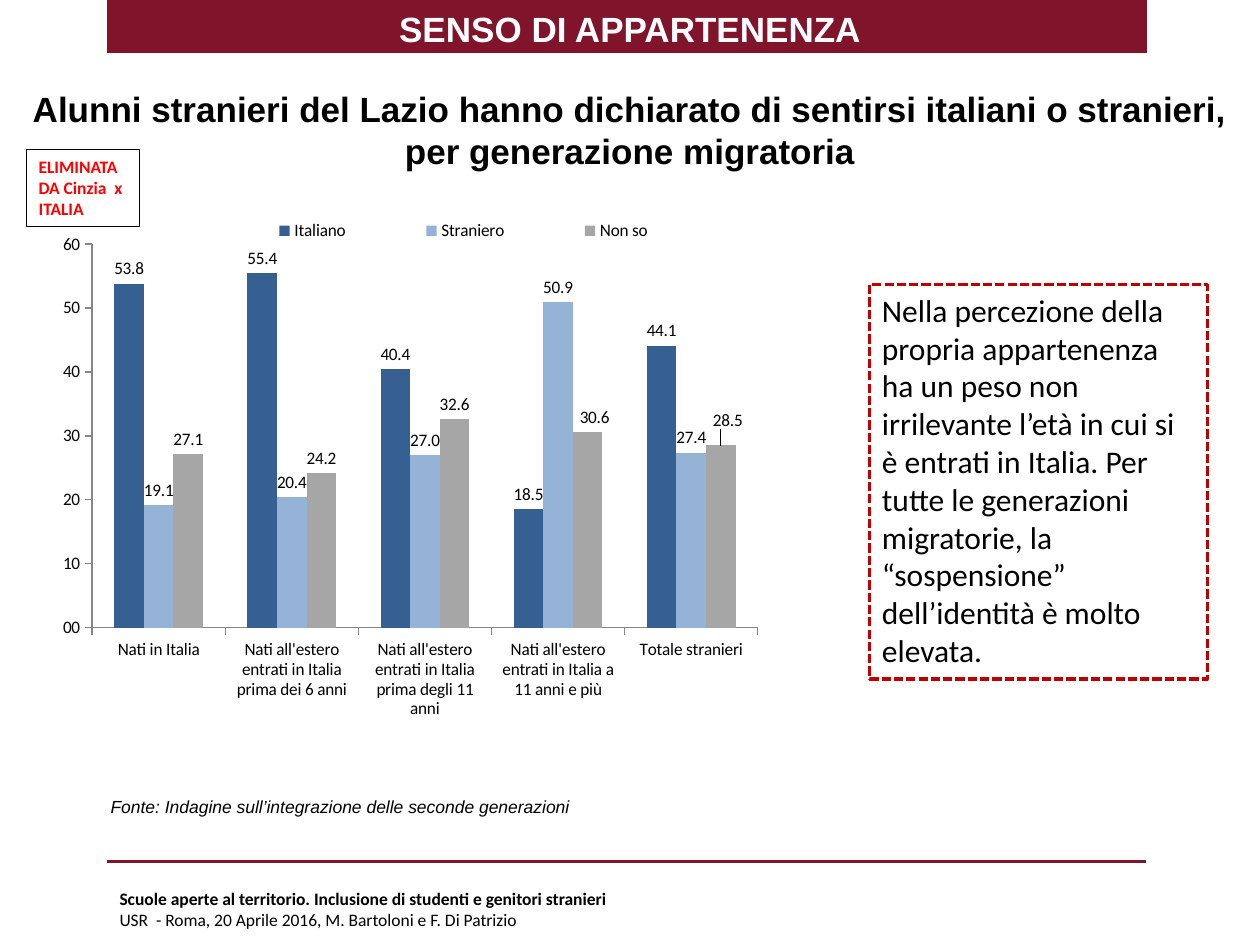
from lxml import etree
from pptx import Presentation
from pptx.chart.data import CategoryChartData
from pptx.dml.color import RGBColor
from pptx.enum.chart import XL_CHART_TYPE, XL_LABEL_POSITION, XL_LEGEND_POSITION, XL_TICK_MARK
from pptx.enum.dml import MSO_LINE
from pptx.enum.shapes import MSO_CONNECTOR, MSO_SHAPE
from pptx.enum.text import MSO_ANCHOR, PP_ALIGN
from pptx.oxml import parse_xml
from pptx.oxml.ns import nsdecls, qn
from pptx.util import Cm, Pt

COLORS = {"wine": "7F142A", "black": "000000", "white": "FFFFFF", "red": "FF0000",
          "dash": "C00000", "axis": "868686",
          "italian": "376092", "foreign": "95B3D7", "unsure": "A6A6A6"}


def rgb(name):
    return RGBColor.from_string(COLORS[name])


def chart_layout(x, y, w=None, h=None, inner=False):
    """Manual chart layout; without a size it is an offset."""
    rows = [("layoutTarget", "inner")] if inner else []
    if w:
        rows += [("xMode", "edge"), ("yMode", "edge")]
    rows += [("x", x), ("y", y)]
    if w:
        rows += [("w", w), ("h", h)]
    body = "".join(f'<c:{tag} val="{val}"/>' for tag, val in rows)
    return parse_xml(f'<c:layout {nsdecls("c")}><c:manualLayout>{body}</c:manualLayout></c:layout>')


class Deck:
    def __init__(self):
        self.prs = Presentation()
        self.prs.slide_width, self.prs.slide_height = Cm(25.4), Cm(19.05)
        self.s = self.prs.slides.add_slide(self.prs.slide_layouts[5])

    def put_text(self, sp, text, size, font="Calibri", color="black", bold=False,
                 italic=False, align=PP_ALIGN.LEFT, anchor=MSO_ANCHOR.TOP):
        tf = sp.text_frame
        tf.word_wrap = True
        tf.vertical_anchor = anchor
        p = tf.paragraphs[0]
        p.text = text
        p.alignment = align
        for r in p.runs:
            r.font.name, r.font.size = font, Pt(size)
            r.font.bold, r.font.italic = bold, italic
            r.font.color.rgb = rgb(color)
        return p

    def title(self, box, text, **style):
        sp = self.s.shapes.title
        sp.left, sp.top, sp.width, sp.height = map(Cm, box)
        self.put_text(sp, text, align=PP_ALIGN.CENTER, anchor=MSO_ANCHOR.MIDDLE, **style)

    def text(self, box, text, **style):
        return self.put_text(self.s.shapes.add_textbox(*map(Cm, box)), text, **style)

    def rect(self, box, fill=None, line=None, width=0.75, dash=None):
        sp = self.s.shapes.add_shape(MSO_SHAPE.RECTANGLE, *map(Cm, box))
        sp.shadow.inherit = False
        if fill:
            sp.fill.solid()
            sp.fill.fore_color.rgb = rgb(fill)
        else:
            sp.fill.background()
        if line:
            sp.line.color.rgb = rgb(line)
            sp.line.width = Pt(width)
            if dash:
                sp.line.dash_style = dash
        else:
            sp.line.fill.background()
        return sp

    def rule(self, x1, x2, y, color, width):
        line = self.s.shapes.add_connector(MSO_CONNECTOR.STRAIGHT, Cm(x1), Cm(y), Cm(x2), Cm(y))
        line.line.color.rgb = rgb(color)
        line.line.width = Pt(width)
        etree.SubElement(line._element.spPr, qn("a:effectLst"))

    def columns(self, box, cats, series, label_shifts):
        data = CategoryChartData()
        data.categories = cats
        for name, _, values in series:
            data.add_series(name, values)
        chart = self.s.shapes.add_chart(XL_CHART_TYPE.COLUMN_CLUSTERED, *map(Cm, box), data).chart
        chart.has_title = False
        chart.font.name, chart.font.size = "Calibri", Pt(10)
        chart.font.color.rgb = rgb("black")

        # Legend and plot area
        chart.has_legend = True
        chart.legend.position = XL_LEGEND_POSITION.BOTTOM
        chart.legend.include_in_layout = False
        for old in chart.legend._element.findall(qn("c:layout")):
            chart.legend._element.remove(old)
        chart.legend._element.find(qn("c:legendPos")).addnext(chart_layout(0.18, 0.02, 0.74, 0.05))
        area = chart._chartSpace.chart.plotArea
        for old in area.findall(qn("c:layout")):
            area.remove(old)
        area.insert(0, chart_layout(0.02, 0.07, 0.95, 0.72, inner=True))

        # Axes
        for axis in (chart.category_axis, chart.value_axis):
            axis.has_major_gridlines = False
            axis.major_tick_mark = XL_TICK_MARK.OUTSIDE
            axis.format.line.color.rgb = rgb("axis")
        axis = chart.value_axis
        axis.minimum_scale, axis.maximum_scale, axis.major_unit = 0, 60, 10
        axis.tick_labels.number_format = "#,#00"
        axis.tick_labels.number_format_is_linked = False

        # Series and value labels
        plot = chart.plots[0]
        plot.gap_width, plot.overlap, plot.vary_by_categories = 150, 0, False
        for ser, (_, color, _) in zip(plot.series, series):
            ser.format.fill.solid()
            ser.format.fill.fore_color.rgb = rgb(color)
            labels = ser.data_labels
            labels.show_value = True
            labels.number_format, labels.number_format_is_linked = "#,##0.0", False
            labels.position = XL_LABEL_POSITION.OUTSIDE_END

        # Nudged labels of the last series
        for i, (dx, dy) in label_shifts.items():
            ser.points[i].data_label.position = XL_LABEL_POSITION.OUTSIDE_END
            idx = ser.data_labels._element.xpath(f'c:dLbl/c:idx[@val="{i}"]')[0]
            idx.addnext(parse_xml(
                f'<c:numFmt {nsdecls("c")} formatCode="#,##0.0" sourceLinked="0"/>'))
            idx.addnext(chart_layout(dx, dy))


def main():
    d = Deck()

    # Header band, footer rule and titles
    d.rect((2.16, 0, 20.96, 1.07), fill="wine")
    d.rule(2.16, 23.11, 17.37, "wine", 2)
    d.title((0, 1.02, 25.4, 3.18),
            "Alunni stranieri del Lazio hanno dichiarato di sentirsi italiani o stranieri, "
            "per generazione migratoria", size=20, font="Arial", bold=True)
    d.text((0, -0.03, 25.4, 1.19), "SENSO DI APPARTENENZA", size=20, font="Arial",
           color="white", bold=True, align=PP_ALIGN.CENTER, anchor=MSO_ANCHOR.MIDDLE)

    # Chart
    d.columns((1.27, 4.17, 14.43, 10.74),
              ["Nati in Italia", "Nati all'estero entrati in Italia prima dei 6 anni",
               "Nati all'estero entrati in Italia prima degli 11 anni",
               "Nati all'estero entrati in Italia a 11 anni e più", "Totale stranieri"],
              [("Italiano", "italian", (53.8, 55.4, 40.4, 18.5, 44.1)),
               ("Straniero", "foreign", (19.1, 20.4, 27, 50.9, 27.4)),
               ("Non so", "unsure", (27.1, 24.2, 32.6, 30.6, 28.5))],
              {3: (0.01, 0), 4: (0.01, -0.02)})
    d.text((1.98, 15.93, 12.7, 0.69), "Fonte: Indagine sull’integrazione delle seconde generazioni",
           size=10, font="Arial", italic=True)

    # Comment and note boxes
    comment = d.rect((17.53, 5.74, 6.81, 7.95), line="dash", width=1.75, dash=MSO_LINE.SQUARE_DOT)
    d.put_text(comment, "Nella percezione della propria appartenenza ha un peso non irrilevante "
               "l’età in cui si è entrati in Italia. Per tutte le generazioni migratorie, la "
               "“sospensione” dell’identità è molto elevata.", size=18)
    note = d.rect((0.53, 3.02, 2.29, 1.55), line="black")
    d.put_text(note, "ELIMINATA DA Cinzia  x ITALIA", size=10, color="red", bold=True)

    # Footer
    p = d.text((2.16, 17.78, 24.38, 1.12),
               "Scuole aperte al territorio. Inclusione di studenti e genitori stranieri\v"
               "USR  - Roma, 20 Aprile 2016, M. Bartoloni e F. Di Patrizio", size=10, bold=True)
    p.runs[1].font.bold = False

    d.prs.save("out.pptx")


if __name__ == "__main__":
    main()
